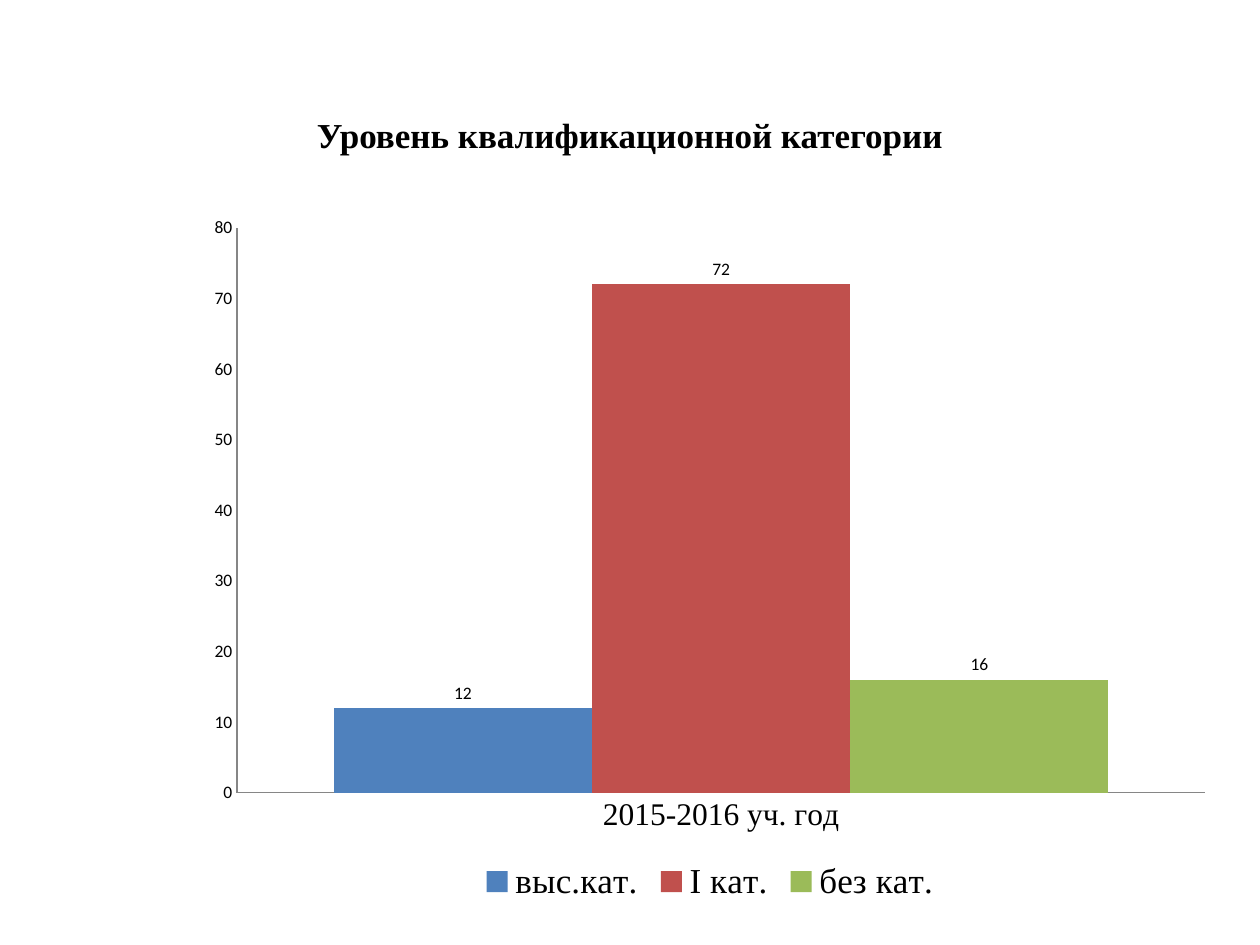
from pptx import Presentation
from pptx.chart.data import CategoryChartData
from pptx.dml.color import RGBColor
from pptx.enum.chart import (XL_CHART_TYPE as ChartType, XL_LABEL_POSITION as LabelPos,
                             XL_LEGEND_POSITION as LegendPos, XL_TICK_MARK as Tick)
from pptx.enum.text import MSO_ANCHOR as Anchor, PP_ALIGN as Align
from pptx.util import Inches, Pt

COLORS = {"text": "000000", "axis": "868686"}
CATEGORIES = [("выс.кат.", 12, "4F81BD"), ("I кат.", 72, "C0504D"), ("без кат.", 16, "9BBB59")]
SERIF = "Times New Roman"


def set_font(font, name, size, bold=False):
    for attribute, value in {"name": name, "size": Pt(size), "bold": bold}.items():
        setattr(font, attribute, value)
    font.color.rgb = RGBColor.from_string(COLORS["text"])


prs = Presentation()
prs.slide_width, prs.slide_height = Inches(10), Inches(7.5)
slide = prs.slides.add_slide(prs.slide_layouts[6])

# Heading
heading = slide.shapes.add_textbox(Inches(0.5), Inches(0.6), Inches(9), Inches(0.93)).text_frame
heading.word_wrap = True
heading.vertical_anchor = Anchor.MIDDLE
line = heading.paragraphs[0]
line.alignment = Align.CENTER
run = line.add_run()
run.text = "Уровень квалификационной категории"
set_font(run.font, SERIF, 20, bold=True)

# Column chart of qualification levels
levels = CategoryChartData()
levels.categories = ["2015-2016 уч. год"]
for name, share, _ in CATEGORIES:
    levels.add_series(name, [share])
chart = slide.shapes.add_chart(ChartType.COLUMN_CLUSTERED, Inches(1.54), Inches(1.62),
                               Inches(8.19), Inches(5.59), levels).chart
chart.has_title = False
set_font(chart.font, "Calibri", 10)

# Columns and their values
plot = chart.plots[0]
plot.gap_width = 75
plot.overlap = 0
plot.vary_by_categories = False
for series, (_, _, color) in zip(plot.series, CATEGORIES):
    series.format.fill.solid()
    series.format.fill.fore_color.rgb = RGBColor.from_string(color)
    labels = series.data_labels
    labels.show_value = True
    labels.position = LabelPos.OUTSIDE_END
    set_font(labels.font, "Calibri", 10)

# Axes
value_axis, year_axis = chart.value_axis, chart.category_axis
for axis, font_name, size in [(value_axis, "Calibri", 10), (year_axis, SERIF, 18)]:
    for attribute, value in {"major_tick_mark": Tick.NONE, "minor_tick_mark": Tick.NONE,
                             "has_major_gridlines": False}.items():
        setattr(axis, attribute, value)
    axis.format.line.color.rgb = RGBColor.from_string(COLORS["axis"])
    axis.format.line.width = Pt(0.75)
    set_font(axis.tick_labels.font, font_name, size)
value_axis.minimum_scale, value_axis.maximum_scale, value_axis.major_unit = 0, 80, 10

# Legend
chart.has_legend = True
chart.legend.position = LegendPos.BOTTOM
chart.legend.include_in_layout = False
set_font(chart.legend.font, SERIF, 20)

prs.save("out.pptx")
